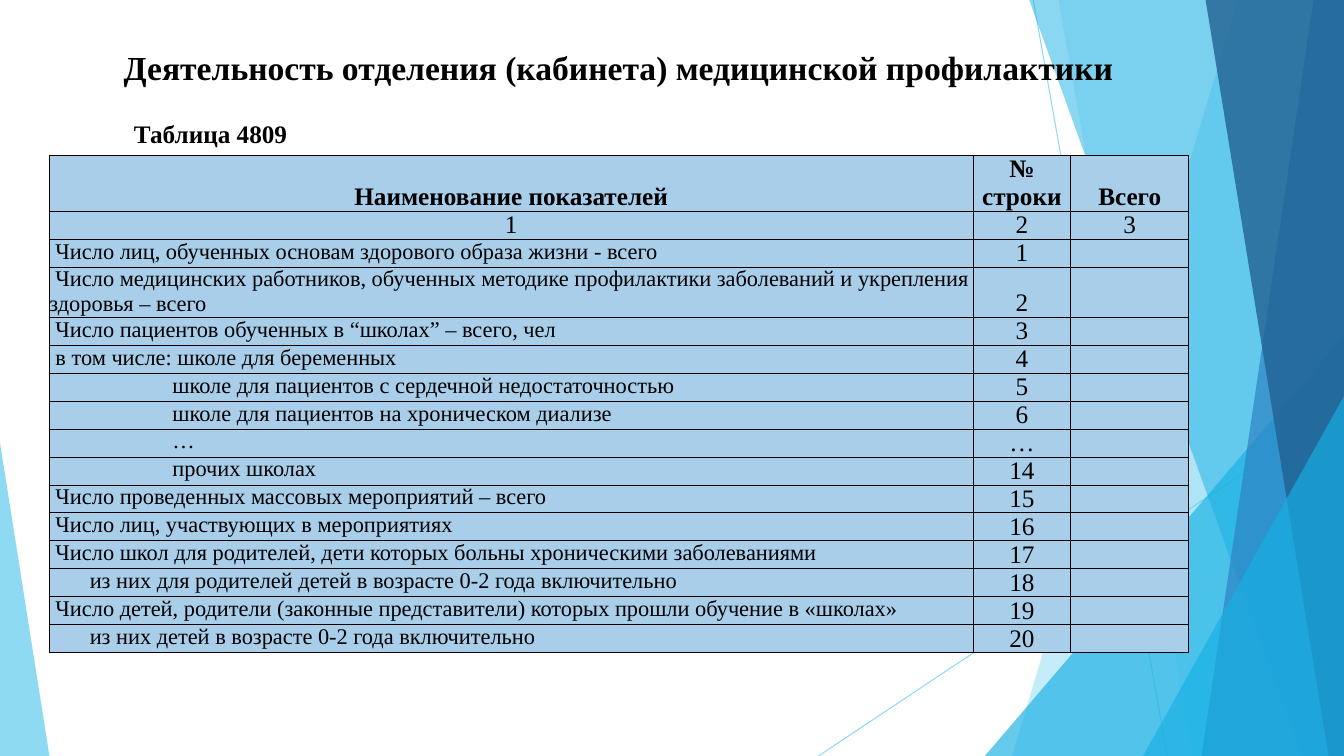
from dataclasses import dataclass

from lxml.etree import SubElement
from pptx import Presentation
from pptx.dml.color import RGBColor
from pptx.enum.shapes import MSO_CONNECTOR
from pptx.enum.text import MSO_ANCHOR, MSO_AUTO_SIZE, PP_ALIGN
from pptx.oxml.ns import qn
from pptx.util import Emu, Inches, Pt


@dataclass(frozen=True)
class Theme:
    font: str = "Times New Roman"
    heading: int = 24
    normal: int = 18
    small: int = 16
    ink: str = "000000"
    cell: str = "A8CEEA"
    sky: str = "5FCBEF"
    cyan: str = "17B0E4"
    blue: str = "2E83C3"
    navy: str = "226292"


THEME = Theme()


@dataclass(frozen=True)
class Box:
    left: float
    top: float
    width: float
    height: float

    def point(self, column, row):
        """Position on a grid of 100 columns by 100 rows laid over the box."""
        return (Emu(round(self.left + self.width * column / 100)),
                Emu(round(self.top + self.height * row / 100)))

    def region(self, column, row, columns, rows):
        return Box(*self.point(column, row),
                   self.width * columns / 100, self.height * rows / 100)

    def frame(self):
        return [Emu(round(n)) for n in (self.left, self.top, self.width, self.height)]


# Corners in hundredths of the page, from back to front
RAYS = [((76.88, 0), (86.85, 100)), ((100, 53.73), (60.9, 100))]
FACETS = [
    (THEME.sky, 36, [(92.1, 0), (100, 0), (100, 100), (75.3, 100)]),
    (THEME.sky, 20, [(78.75, 0), (100, 0), (100, 100), (88.73, 100)]),
    (THEME.cyan, 66, [(100, 44.4), (100, 100), (73.28, 100)]),
    (THEME.cyan, 50, [(76.58, 0), (100, 0), (100, 100), (96.83, 100)]),
    (THEME.blue, 70, [(97.73, 0), (100, 0), (100, 100), (89.4, 100)]),
    (THEME.navy, 80, [(89.7, 0), (100, 0), (100, 100), (98.85, 100)]),
    (THEME.cyan, 66, [(100, 52.4), (100, 100), (85.05, 100)]),
    (THEME.sky, 70, [(0, 58.53), (3.68, 100), (0, 100)]),
]

# First-line indents in inches
EDGE, NESTED, SCHOOL = 0.06, 0.4, 1.22
COLUMNS = [9.16, 0.97, 1.17]
HEADERS = ["Наименование показателей", "№ строки", "Всего"]
INDICATORS = [
    (EDGE, "Число лиц, обученных основам здорового образа жизни - всего", "1"),
    (EDGE, "Число медицинских работников, обученных методике профилактики "
           "заболеваний и укрепления здоровья – всего", "2"),
    (EDGE, "Число пациентов обученных в “школах” – всего, чел", "3"),
    (EDGE, "в том числе: школе для беременных", "4"),
    (SCHOOL, "школе для пациентов с сердечной недостаточностью", "5"),
    (SCHOOL, "школе для пациентов на хроническом диализе", "6"),
    (SCHOOL, "…", "…"),
    (SCHOOL, "прочих школах", "14"),
    (EDGE, "Число проведенных массовых мероприятий – всего", "15"),
    (EDGE, "Число лиц, участвующих в мероприятиях", "16"),
    (EDGE, "Число школ для родителей, дети которых больны хроническими заболеваниями", "17"),
    (NESTED, "из них для родителей детей в возрасте 0-2 года включительно", "18"),
    (EDGE, "Число детей, родители (законные представители) которых прошли "
           "обучение в «школах»", "19"),
    (NESTED, "из них детей в возрасте 0-2 года включительно", "20"),
]


def set_opacity(fill_parent, percent):
    color = next(fill_parent.iter(qn("a:srgbClr")))
    SubElement(color, qn("a:alpha"), val=str(percent * 1000))


def style_paragraph(para, size, bold=False, align=PP_ALIGN.LEFT):
    para.alignment = align
    para.font.name = THEME.font
    para.font.size = Pt(size)
    para.font.bold = bold
    para.font.color.rgb = RGBColor.from_string(THEME.ink)


def draw_backdrop(page, box):
    for start, end in RAYS:
        ray = page.shapes.add_connector(
            MSO_CONNECTOR.STRAIGHT, *box.point(*start), *box.point(*end))
        ray.line.width = Pt(0.75)
        ray.line.color.rgb = RGBColor.from_string(THEME.sky)
        properties = ray._element.spPr
        set_opacity(properties, 70)
        SubElement(properties, qn("a:effectLst"))
    for color, opacity, corners in FACETS:
        first, *others = [box.point(*corner) for corner in corners]
        builder = page.shapes.build_freeform(*first)
        builder.add_line_segments(others, close=True)
        facet = builder.convert_to_shape()
        facet.shadow.inherit = False
        facet.fill.solid()
        facet.fill.fore_color.rgb = RGBColor.from_string(color)
        set_opacity(facet._element.spPr, opacity)
        facet.line.fill.background()


def place_heading(page, box):
    title = page.shapes.title
    title.left, title.top, title.width, title.height = box.frame()
    title.text_frame.text = "Деятельность отделения (кабинета) медицинской профилактики"
    title.text_frame.auto_size = MSO_AUTO_SIZE.NONE
    title.text_frame.vertical_anchor = MSO_ANCHOR.MIDDLE
    style_paragraph(title.text_frame.paragraphs[0], THEME.heading, True, PP_ALIGN.CENTER)
    page.shapes._spTree.append(title._element)  # bring in front of the backdrop


def place_caption(page, box):
    caption = page.shapes.add_textbox(*box.frame()).text_frame
    caption.word_wrap = True
    caption.text = "Таблица 4809"
    style_paragraph(caption.paragraphs[0], THEME.normal, True)


def add_borders(cell):
    """Put thin borders ahead of the fill, as the schema requires."""
    properties = cell._tc.get_or_add_tcPr()
    for position, side in enumerate(("lnL", "lnR", "lnT", "lnB")):
        border = SubElement(properties, qn(f"a:{side}"), w=str(Pt(0.5)))
        fill = SubElement(border, qn("a:solidFill"))
        SubElement(fill, qn("a:srgbClr"), val=THEME.ink)
        properties.insert(position, border)


def fill_cell(cell, text, size, bold=False, align=PP_ALIGN.CENTER,
              anchor=MSO_ANCHOR.BOTTOM, indent=0):
    cell.margin_left = cell.margin_right = cell.margin_top = cell.margin_bottom = 0
    cell.vertical_anchor = anchor
    cell.fill.solid()
    cell.fill.fore_color.rgb = RGBColor.from_string(THEME.cell)
    add_borders(cell)
    cell.text = text
    para = cell.text_frame.paragraphs[0]
    style_paragraph(para, size, bold, align)
    if indent:
        para._p.get_or_add_pPr().set("indent", str(Inches(indent)))


def place_table(page, box):
    lines = [2, 1] + [1.8 if number == "2" else 1 for _, _, number in INDICATORS]
    frame = page.shapes.add_table(len(lines), len(COLUMNS), *box.frame())
    table = frame.table
    for column, share in zip(table.columns, COLUMNS):
        column.width = Emu(round(box.width * share / sum(COLUMNS)))
    for row, share in zip(table.rows, lines):
        row.height = Emu(round(box.height * share / sum(lines)))
    for column, header in enumerate(HEADERS):
        fill_cell(table.cell(0, column), header, THEME.normal, bold=True)
        fill_cell(table.cell(1, column), str(column + 1), THEME.normal)
    for row, (indent, name, number) in enumerate(INDICATORS, start=2):
        fill_cell(table.cell(row, 0), name, THEME.small, align=PP_ALIGN.LEFT,
                  anchor=MSO_ANCHOR.TOP, indent=indent)
        fill_cell(table.cell(row, 1), number, THEME.normal)
        fill_cell(table.cell(row, 2), "", THEME.normal)


def main():
    deck = Presentation()
    deck.slide_width, deck.slide_height = Inches(13.33), Inches(7.5)
    page = deck.slides.add_slide(deck.slide_layouts[5])
    whole = Box(0, 0, deck.slide_width, deck.slide_height)
    draw_backdrop(page, whole)
    place_caption(page, whole.region(9.23, 14.93, 14.4, 5.6))
    place_heading(page, whole.region(6.98, 4.4, 78.1, 8.93))
    place_table(page, whole.region(3.68, 20.53, 84.77, 65.8))
    deck.save("out.pptx")


if __name__ == "__main__":
    main()
